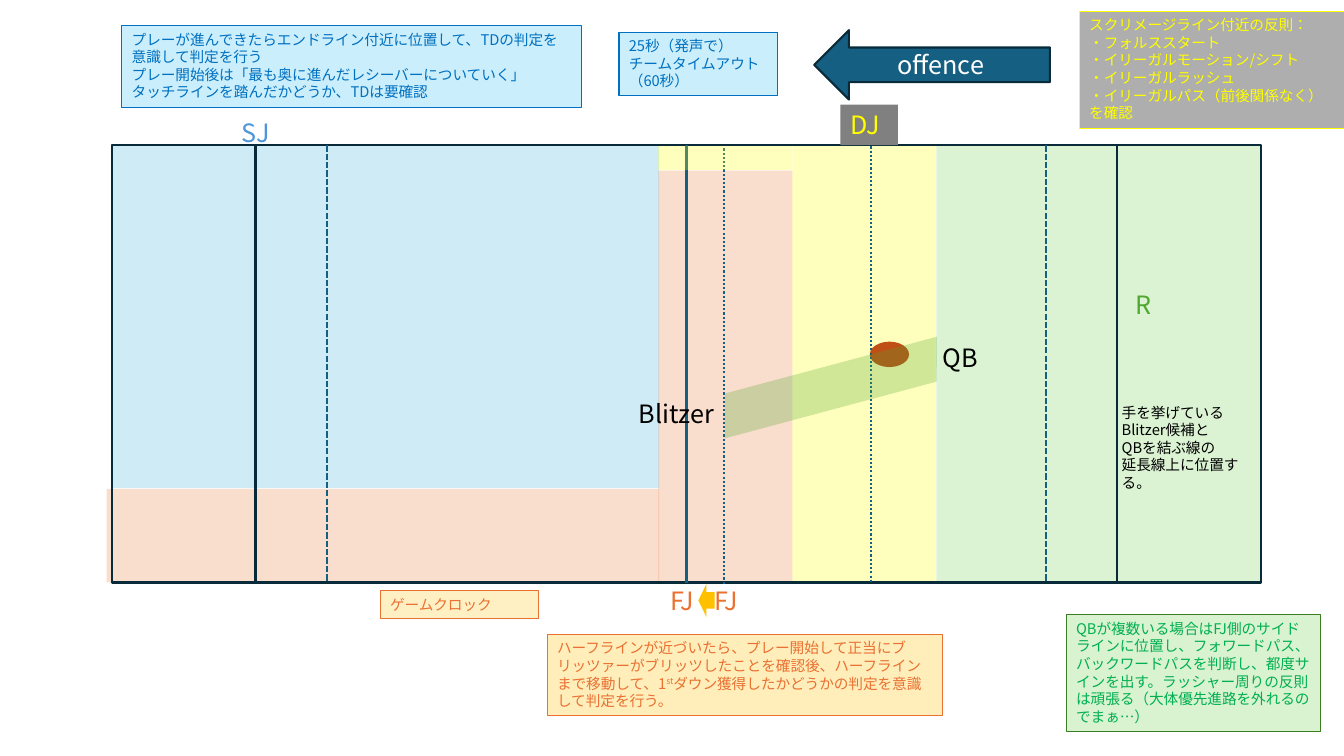
from dataclasses import dataclass

from pptx import Presentation
from pptx.dml.color import RGBColor
from pptx.enum.dml import MSO_LINE_DASH_STYLE as DASH
from pptx.enum.lang import MSO_LANGUAGE_ID as LANG
from pptx.enum.shapes import MSO_CONNECTOR, MSO_SHAPE as SHAPE
from pptx.enum.text import MSO_ANCHOR as ANCHOR, MSO_AUTO_SIZE as AUTO, PP_ALIGN as ALIGN
from pptx.oxml.ns import qn
from pptx.util import Cm, Pt


@dataclass(frozen=True)
class Theme:
    """Colours, font and type sizes of the slide."""
    font: str = "Noto Sans CJK JP"
    label: float = 18
    note: float = 10.5
    rule: float = 1.5
    border: float = 0.75
    black: str = "000000"
    white: str = "FFFFFF"
    navy: str = "092A39"
    teal: str = "156082"
    sky: str = "0F9ED5"
    orange: str = "E97132"
    yellow: str = "FFFF00"
    lime: str = "8ED973"
    green: str = "4EA72E"
    brown: str = "C04F15"
    gold: str = "FFC000"
    gray: str = "808080"
    silver: str = "AEAEAE"
    side_blue: str = "4E95D9"
    blue: str = "0070C0"
    pale_blue: str = "CAEEFB"
    emerald: str = "00B050"
    forest: str = "3B7D23"
    pale_green: str = "D9F2D0"


T = Theme()
FIELD = (2.82, 3.66, 28.96, 11.02)


def apply(obj, values):
    """Set each attribute of obj named in values."""
    for name, value in values.items():
        setattr(obj, name, value)


def within(box, x, y, w, h):
    """Return a box in slide coordinates from offsets inside a parent box."""
    return box[0] + x, box[1] + y, w, h


def add_block(shapes, kind, box, fill=None, alpha=None, line=None, width=T.rule):
    """Add a preset shape with optional fill, opacity in percent and outline."""
    sp = shapes.add_shape(kind, *map(Cm, box))
    sp.shadow.inherit = False
    if fill:
        sp.fill.solid()
        sp.fill.fore_color.rgb = RGBColor.from_string(fill)
        if alpha:
            color = sp.fill._xPr.find(qn("a:solidFill"))[0]
            color.makeelement(qn("a:alpha"), {})
            node = color.makeelement(qn("a:alpha"), {"val": str(alpha * 1000)})
            color.append(node)
    else:
        sp.fill.background()
    if line:
        apply(sp.line, {"width": Pt(width)})
        sp.line.color.rgb = RGBColor.from_string(line)
    else:
        sp.line.fill.background()
    return sp


def add_rule(shapes, x, y, length, dash=None):
    """Add a vertical field line."""
    cx = shapes.add_connector(MSO_CONNECTOR.STRAIGHT, Cm(x), Cm(y), Cm(x), Cm(y + length))
    apply(cx.line, {"width": Pt(T.rule), "dash_style": dash})
    cx.line.color.rgb = RGBColor.from_string(T.teal)
    props = cx._element.spPr
    props.append(props.makeelement(qn("a:effectLst"), {}))
    return cx


def write(sp, lines, size, color, align=ALIGN.LEFT, anchor=ANCHOR.TOP, fit=AUTO.SHAPE_TO_FIT_TEXT):
    """Write paragraphs into a shape; text between carets is superscript."""
    tf = sp.text_frame
    apply(tf, {"word_wrap": True, "auto_size": fit, "vertical_anchor": anchor})
    for i, line in enumerate(lines):
        p = tf.paragraphs[0] if i == 0 else tf.add_paragraph()
        p.alignment = align
        for j, part in enumerate(line.split("^")):
            r = p.add_run()
            r.text = part
            apply(r.font, {"name": T.font, "size": Pt(size), "language_id": LANG.JAPANESE})
            r.font.color.rgb = RGBColor.from_string(color)
            props = r.font._element
            props.append(props.makeelement(qn("a:ea"), {"typeface": T.font}))
            if j % 2:
                props.set("baseline", "30000")


def add_text(s, box, lines, size, color):
    """Add a plain text box."""
    write(s.shapes.add_textbox(*map(Cm, box)), lines, size, color)


def add_note(s, box, lines, color, fill, line, alpha=None):
    """Add a bordered note."""
    sp = add_block(s.shapes, SHAPE.RECTANGLE, box, fill, alpha, line, T.border)
    write(sp, lines, T.note, color)


def draw_zones(s, box):
    """Draw the tinted area each official watches."""
    zones = [
        ((0, 0, 13.79, 8.64), T.sky, 20),
        ((-0.13, 8.66, 13.92, 2.36), T.orange, 24),
        ((17.15, 0.02, 3.61, 10.97), T.yellow, 26),
        ((20.78, 0, 8.18, box[3]), T.lime, 31),
        ((13.77, 0.64, 3.38, 10.36), T.orange, 24),
    ]
    for area, fill, alpha in zones:
        add_block(s.shapes, SHAPE.RECTANGLE, within(box, *area), fill, alpha)


def draw_field(s, box):
    """Draw the field outline, its lines, the ball and the blitz lane."""
    x, y, w, h = box
    group = s.shapes.add_group_shape().shapes
    frame = add_block(group, SHAPE.FLOWCHART_PREDEFINED_PROCESS, box, line=T.navy)
    half = add_rule(group, x + w / 2, y, h)
    half.begin_connect(frame, 0)
    half.end_connect(frame, 2)
    for dx in (5.41, w - 5.41):
        add_rule(group, x + dx, y, h, DASH.SQUARE_DOT)
    add_block(s.shapes, SHAPE.OVAL, within(box, 19.1, 4.95, 0.99, 0.64), T.brown)
    for dx, dy in ((15.42, 0.08), (19.13, 0.03)):
        add_rule(s.shapes, x + dx, y + dy, h, DASH.ROUND_DOT)
    lane = add_block(s.shapes, SHAPE.PARALLELOGRAM, within(box, 15.21, 5.56, 5.82, 1.09), T.green, 27)
    lane.rotation = 345
    lane.adjustments[0] = 0.27
    add_block(s.shapes, SHAPE.RECTANGLE, within(box, 13.74, 0.02, 3.4, 0.61), T.yellow, 26)


def draw_positions(s, box):
    """Label the players and officials around the field."""
    labels = [
        ("Blitzer", 13.03, 6.25, T.black),
        ("QB", 20.68, 4.83, T.black),
        ("R", 25.55, 3.51, T.green),
        ("SJ", 3.02, -0.84, T.side_blue),
        ("FJ", 13.82, 10.97, T.orange),
        ("FJ", 14.94, 10.97, T.orange),
    ]
    add_block(s.shapes, SHAPE.LEFT_ARROW, within(box, 14.78, 11.05, 0.41, 0.84), T.gold)
    for name, x, y, color in labels:
        add_text(s, within(box, x, y, 3.18, 1.02), [name], T.label, color)
    dj = add_block(s.shapes, SHAPE.RECTANGLE, within(box, 18.36, -1.02, 1.45, 1.02), T.gray)
    write(dj, ["DJ"], T.label, T.yellow)
    referee = ["手を挙げているBlitzer候補と", "QBを結ぶ線の", "延長線上に位置する。"]
    add_text(s, within(box, 25.2, 6.38, 3.53, 2.49), referee, T.note, T.black)


def draw_offence(s, box):
    """Draw the arrow for the direction of play."""
    sp = add_block(s.shapes, SHAPE.LEFT_ARROW, box, T.teal, line=T.navy)
    write(sp, ["offence"], T.label, T.white, ALIGN.CENTER, ANCHOR.MIDDLE, AUTO.NONE)


def draw_notes(s, box):
    """Place the duty notes above and below the field."""
    blue = (T.blue, T.pale_blue, T.blue)
    amber = (T.orange, T.gold, T.orange)
    notes = [
        ((27.2, 0.28, 6.68, 2.95),
         ["スクリメージライン付近の反則：", "・フォルススタート", "・イリーガルモーション/シフト",
          "・イリーガルラッシュ", "・イリーガルパス（前後関係なく）", "を確認"],
         (T.yellow, T.silver, T.yellow)),
        ((9.58, 14.88, 3.99, 0.71), ["ゲームクロック"], (*amber, 23)),
        ((15.6, 0.81, 3.99, 1.6), ["25秒（発声で）", "チームタイムアウト", "（60秒）"], blue),
        ((13.79, 15.98, 9.96, 2.06),
         ["ハーフラインが近づいたら、プレー開始して正当にブリッツァーがブリッツしたことを確認後、"
          "ハーフラインまで移動して、1^st^ダウン獲得したかどうかの判定を意識して判定を行う。"],
         (*amber, 27)),
        ((3.07, 0.64, 11.58, 2.06),
         ["プレーが進んできたらエンドライン付近に位置して、TDの判定を意識して判定を行う",
          "プレー開始後は「最も奥に進んだレシーバーについていく」",
          "タッチラインを踏んだかどうか、TDは要確認"], blue),
        ((26.87, 15.49, 6.4, 2.95),
         ["QBが複数いる場合はFJ側のサイドラインに位置し、フォワードパス、バックワードパスを判断し、"
          "都度サインを出す。ラッシャー周りの反則は頑張る（大体優先進路を外れるのでまぁ…）"],
         (T.emerald, T.pale_green, T.forest)),
    ]
    for area, lines, look in notes:
        add_note(s, within(box, *area), lines, *look)


def main():
    """Build the slide and save it."""
    prs = Presentation()
    apply(prs, {"slide_width": Cm(33.87), "slide_height": Cm(19.05)})
    s = prs.slides.add_slide(prs.slide_layouts[6])
    draw_zones(s, FIELD)
    draw_field(s, FIELD)
    draw_positions(s, FIELD)
    draw_offence(s, (20.52, 0.76, 5.94, 1.75))
    draw_notes(s, (0, 0, 33.87, 19.05))
    prs.save("out.pptx")


if __name__ == "__main__":
    main()
